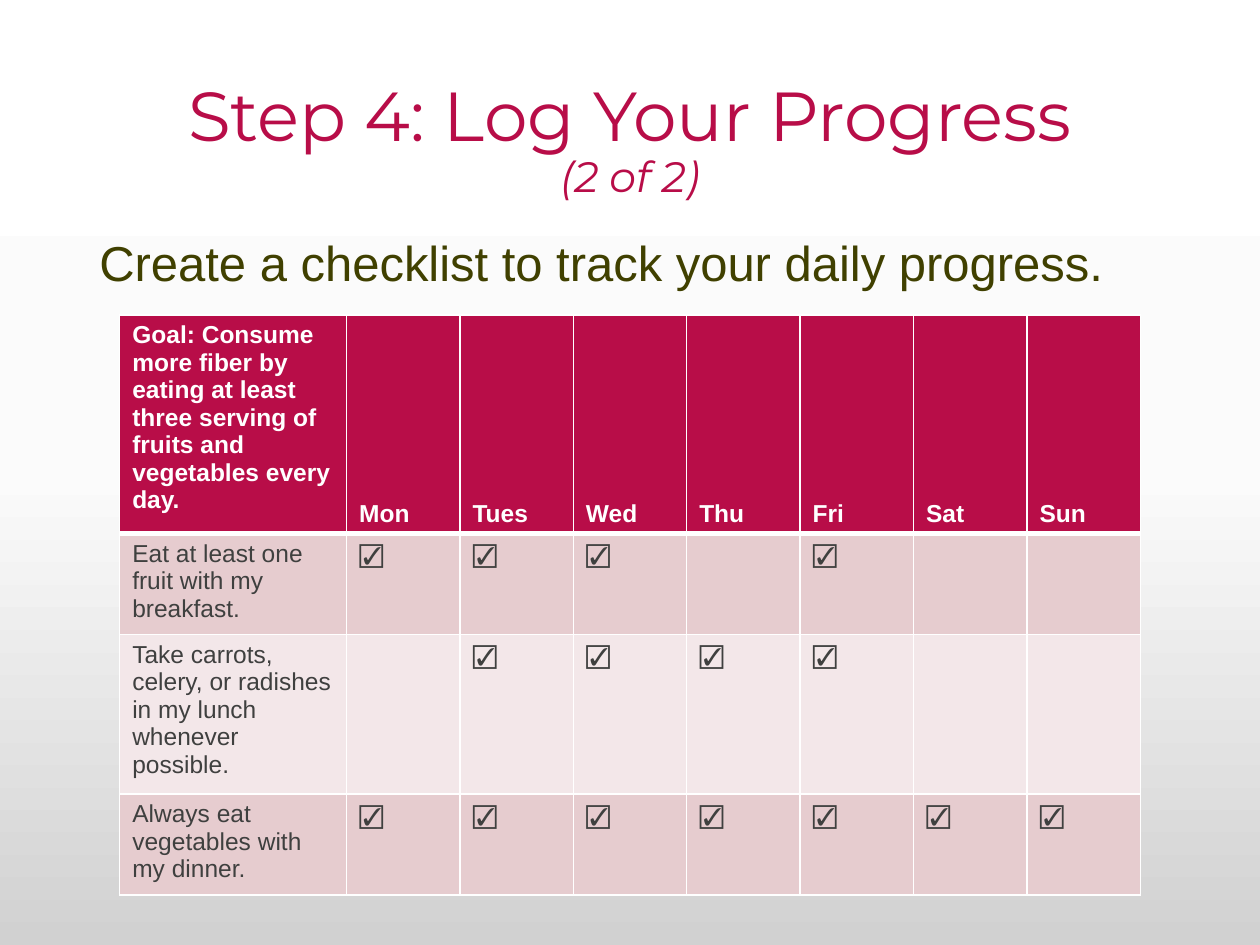
import copy
import pptx
import pptx.util
import pptx.dml.color
import pptx.enum.text
import pptx.oxml
import pptx.oxml.ns

Inches, Pt = pptx.util.Inches, pptx.util.Pt
ALIGN, ANCHOR = pptx.enum.text.PP_ALIGN, pptx.enum.text.MSO_ANCHOR

COLORS = {
    "crimson": "B80D48", "olive": "404000", "gray": "3F403F", "white": "FFFFFF",
    "band_dark": "E6CCCF", "band_light": "F3E7E9",
    "bg_top": "FFFFFF", "bg_mid": "FBFBFB", "bg_bottom": "D1D1D1",
}
CHECK = "☑"
DAYS = ["Mon", "Tues", "Wed", "Thu", "Fri", "Sat", "Sun"]
GOAL = ("Goal: Consume more fiber by eating at least three serving of "
        "fruits and vegetables every day.")
HABITS = [
    ("Eat at least one fruit with my breakfast.", ["Mon", "Tues", "Wed", "Fri"]),
    ("Take carrots, celery, or radishes in my lunch whenever possible.",
     ["Tues", "Wed", "Thu", "Fri"]),
    ("Always eat vegetables with my dinner.", DAYS),
]
COL_WIDTHS = [1.8] + [0.9] * len(DAYS)
ROW_HEIGHTS = [1.62, 0.75, 1.19, 0.76]


def rgb(name):
    return pptx.dml.color.RGBColor.from_string(COLORS[name])


def add_text(p, text, size=14, font="Arial", color="gray", bold=False, italic=False):
    r = p.add_run()
    r.text = text
    r.font.size, r.font.name = Pt(size), font
    r.font.bold, r.font.italic = bold, italic
    r.font.color.rgb = rgb(color)
    return r


class SlideBuilder:
    heading_font = "Montserrat"
    check_font = "Cabin"

    def __init__(self, prs):
        self.s = prs.slides.add_slide(prs.slide_layouts[5])

    def background(self, *stops):
        fill = self.s.background.fill
        fill.gradient()
        fill.gradient_angle = 270
        gs_list = self.s._element.find(".//" + pptx.oxml.ns.qn("a:gsLst"))
        while len(gs_list) < len(stops):
            gs_list.append(copy.deepcopy(gs_list[0]))
        for stop, (position, color) in zip(fill.gradient_stops, stops):
            stop.position = position
            stop.color.rgb = rgb(color)

    def place(self, sp, left, top, width, height):
        sp.left, sp.top = Inches(left), Inches(top)
        sp.width, sp.height = Inches(width), Inches(height)

    def title(self, text, part, *box):
        sp = self.s.shapes.title
        self.place(sp, *box)
        tf = sp.text_frame
        tf.word_wrap = True
        tf.vertical_anchor = ANCHOR.MIDDLE
        p = tf.paragraphs[0]
        p.alignment, p.line_spacing = ALIGN.CENTER, 0.9
        style = {"font": self.heading_font, "color": "crimson"}
        add_text(p, text, size=39.6, **style)
        p.add_line_break()
        add_text(p, part, size=24.3, italic=True, **style)

    def body(self, text, *box):
        tf = self.s.shapes.add_textbox(*map(Inches, box)).text_frame
        tf.word_wrap = True
        p = tf.paragraphs[0]
        p.line_spacing, p.space_before = 0.9, Pt(10)
        add_text(p, text, size=28, color="olive")

    def borders(self, cell, **widths):
        tc_pr = cell._tc.get_or_add_tcPr()
        for i, side in enumerate("LRTB"):
            tc_pr.insert(i, pptx.oxml.parse_xml(
                f'<a:ln{side} {pptx.oxml.ns.nsdecls("a")} w="{Pt(widths.get(side, 1))}">'
                f'<a:solidFill><a:srgbClr val="{COLORS["white"]}"/></a:solidFill></a:ln{side}>'))

    def cell(self, cell, text, fill, anchor=ANCHOR.TOP, edges=None, **fmt):
        cell.fill.solid()
        cell.fill.fore_color.rgb = rgb(fill)
        cell.vertical_anchor = anchor
        self.borders(cell, **(edges or {}))
        if text:
            add_text(cell.text_frame.paragraphs[0], text, **fmt)

    def checklist(self, left, top):
        table = self.s.shapes.add_table(
            len(ROW_HEIGHTS), len(COL_WIDTHS), Inches(left), Inches(top),
            Inches(sum(COL_WIDTHS)), Inches(sum(ROW_HEIGHTS))).table
        for column, width in zip(table.columns, COL_WIDTHS):
            column.width = Inches(width)
        for row, height in zip(table.rows, ROW_HEIGHTS):
            row.height = Inches(height)

        # Header row
        for j, text in enumerate([GOAL] + DAYS):
            self.cell(table.cell(0, j), text, "crimson", ANCHOR.BOTTOM if j else ANCHOR.TOP,
                      edges={"B": 3}, color="white", bold=True)

        # One row per habit, ticked on the days it was kept
        for i, (habit, kept) in enumerate(HABITS, 1):
            fill = "band_dark" if i % 2 else "band_light"
            edges = {"T": 3} if i == 1 else {}
            self.cell(table.cell(i, 0), habit, fill, edges=edges)
            for j, day in enumerate(DAYS, 1):
                self.cell(table.cell(i, j), CHECK if day in kept else "", fill,
                          edges=edges, font=self.check_font)


def main():
    prs = pptx.Presentation()
    prs.slide_width, prs.slide_height = Inches(10), Inches(7.5)
    slide = SlideBuilder(prs)
    slide.background((0, "bg_top"), (0.5, "bg_mid"), (1, "bg_bottom"))
    slide.title("Step 4: Log Your Progress", "(2 of 2)", 0.69, 0.4, 8.62, 1.45)
    slide.body("Create a checklist to track your daily progress.", 0.69, 1.85, 8.62, 0.6)
    slide.checklist(0.95, 2.5)
    prs.save("out.pptx")


if __name__ == "__main__":
    main()
